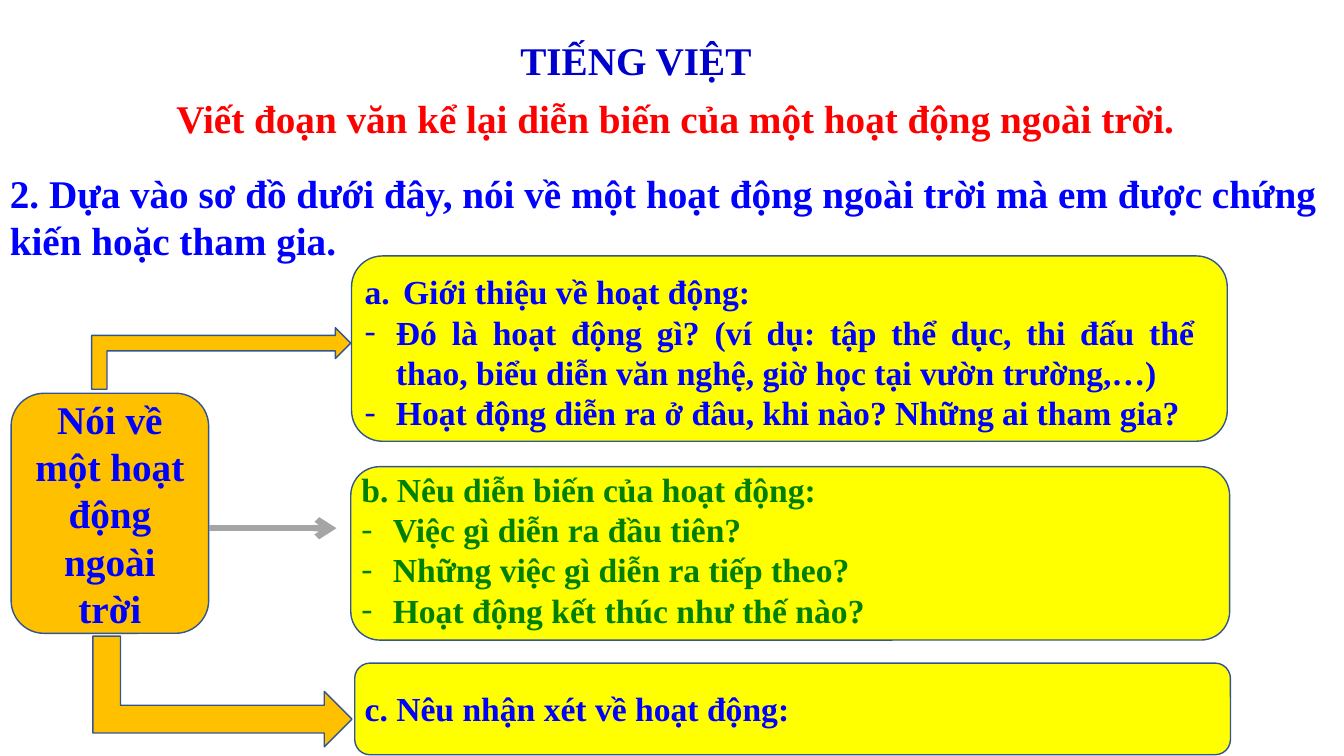
from lxml.etree import SubElement
from pptx import Presentation
from pptx.dml.color import RGBColor as RGB
from pptx.enum.shapes import MSO_CONNECTOR as LINE, MSO_SHAPE as SHAPE
from pptx.enum.text import MSO_ANCHOR as ANCHOR, MSO_AUTO_SIZE as FIT, PP_ALIGN as ALIGN
from pptx.oxml.ns import qn
from pptx.util import Cm, Pt

COLORS = {"blue": "0000FF", "navy": "0000CC", "red": "FF0000", "green": "008000",
          "orange": "FFC000", "yellow": "FFFF00", "outline": "325491", "gray": "A5A5A5"}
LETTER = ("buAutoNum", {"type": "alphaLcPeriod"}, 0.97)
DASH = ("buChar", {"char": "-"}, 0.79)


def color(name):
    return RGB.from_string(COLORS[name])


class Deck:
    font = "Times New Roman"

    def __init__(self, width, height):
        self.prs = Presentation()
        self.prs.slide_width, self.prs.slide_height = Cm(width), Cm(height)
        self.slide = self.prs.slides.add_slide(self.prs.slide_layouts[5])

    def fill_text(self, tf, lines, ink, size, align, anchor=ANCHOR.TOP):
        """Fill a text frame; each line is a (text, bullet) pair."""
        tf.word_wrap, tf.vertical_anchor = True, anchor
        for i, (text, bullet) in enumerate(lines):
            p = tf.add_paragraph() if i else tf.paragraphs[0]
            p.alignment = align
            if bullet:
                self.bullet(p, *bullet)
            r = p.add_run()
            r.text = text
            for key, value in {"name": self.font, "size": Pt(size), "bold": True}.items():
                setattr(r.font, key, value)
            r.font.color.rgb = color(ink)

    def bullet(self, p, tag, attrs, indent):
        pPr = p._p.get_or_add_pPr()
        pPr.set("marL", str(int(Cm(indent))))
        pPr.set("indent", str(-int(Cm(indent))))
        SubElement(pPr, qn("a:buFont"), typeface=self.font)
        SubElement(pPr, qn("a:" + tag), **attrs)

    def title(self, box, text, ink, size=28):
        sp = self.slide.shapes.title
        for key, value in zip(("left", "top", "width", "height"), box):
            setattr(sp, key, Cm(value))
        self.fill_text(sp.text_frame, [(text, None)], ink, size, ALIGN.CENTER)

    def text(self, box, lines, ink, size=28, align=ALIGN.LEFT):
        sp = self.slide.shapes.add_textbox(*map(Cm, box))
        self.fill_text(sp.text_frame, lines, ink, size, align)
        sp.text_frame.auto_size = FIT.SHAPE_TO_FIT_TEXT

    def shape(self, kind, box, fill):
        sp = self.slide.shapes.add_shape(kind, *map(Cm, box))
        sp.shadow.inherit = False
        sp.fill.solid()
        sp.fill.fore_color.rgb = color(fill)
        sp.line.color.rgb = color("outline")
        sp.line.width = Pt(1)
        return sp

    def bent_arrow(self, box, flip=False):
        sp = self.shape(SHAPE.BENT_ARROW, box, "orange")
        for i, value in enumerate((0.25, 0.25, 0.25, 0)):
            sp.adjustments[i] = value
        if flip:
            sp._element.spPr.xfrm.set("flipV", "1")

    def arrow(self, x1, x2, y):
        c = self.slide.shapes.add_connector(LINE.STRAIGHT, Cm(x1), Cm(y), Cm(x2), Cm(y))
        c.line.color.rgb = color("gray")
        c.line.width = Pt(4.5)
        spPr = c._element.spPr
        SubElement(spPr.find(qn("a:ln")), qn("a:tailEnd"), type="arrow")
        SubElement(spPr, qn("a:effectLst"))


def main():
    deck = Deck(33.87, 19.05)

    # Headings and task
    deck.title((6.5, 0.79, 19.05, 1.45), "TIẾNG VIỆT", "navy")
    deck.text((0.08, 2.26, 33.87, 1.45),
              [("Viết đoạn văn kể lại diễn biến của một hoạt động ngoài trời.", None)],
              "red", align=ALIGN.CENTER)
    deck.text((0, 4.14, 33.87, 2.64),
              [("2. Dựa vào sơ đồ dưới đây, nói về một hoạt động ngoài trời mà em "
                "được chứng kiến hoặc tham gia.", None)], "blue")

    # Topic
    topic = deck.shape(SHAPE.ROUNDED_RECTANGLE, (0.28, 9.91, 4.98, 6.05), "orange")
    deck.fill_text(topic.text_frame, [("Nói về một hoạt động ngoài trời", None)],
                   "blue", 28, ALIGN.CENTER, ANCHOR.MIDDLE)

    # Arrows to the three parts
    deck.bent_arrow((2.31, 8.26, 6.53, 1.55))
    deck.arrow(5.26, 8.48, 13.31)
    deck.bent_arrow((2.34, 16.03, 6.53, 2.79), flip=True)

    # Parts: panel, text area, ink, alignment, lines
    parts = [
        ((8.86, 6.45, 22.07, 4.67), (8.94, 6.71, 21.41, 4.37), "blue", ALIGN.JUSTIFY, [
            ("Giới thiệu về hoạt động:", LETTER),
            ("Đó là hoạt động gì? (ví dụ: tập thể dục, thi đấu thể thao, biểu diễn "
             "văn nghệ, giờ học tại vườn trường,…)", DASH),
            ("Hoạt động diễn ra ở đâu, khi nào? Những ai tham gia?", DASH)]),
        ((8.84, 11.76, 22.15, 4.37), (8.86, 11.68, 21.64, 4.37), "green", ALIGN.JUSTIFY, [
            ("b. Nêu diễn biến của hoạt động:", None),
            ("Việc gì diễn ra đầu tiên?", DASH),
            ("Những việc gì diễn ra tiếp theo?", DASH),
            ("Hoạt động kết thúc như thế nào?", DASH)]),
        ((8.94, 16.71, 22.07, 2.31), (8.94, 17.22, 19.51, 1.27), "blue", ALIGN.LEFT, [
            ("c. Nêu nhận xét về hoạt động:", None)]),
    ]
    for panel, area, ink, align, lines in parts:
        deck.shape(SHAPE.ROUNDED_RECTANGLE, panel, "yellow")
        deck.text(area, lines, ink, 24, align)

    deck.prs.save("out.pptx")


if __name__ == "__main__":
    main()
